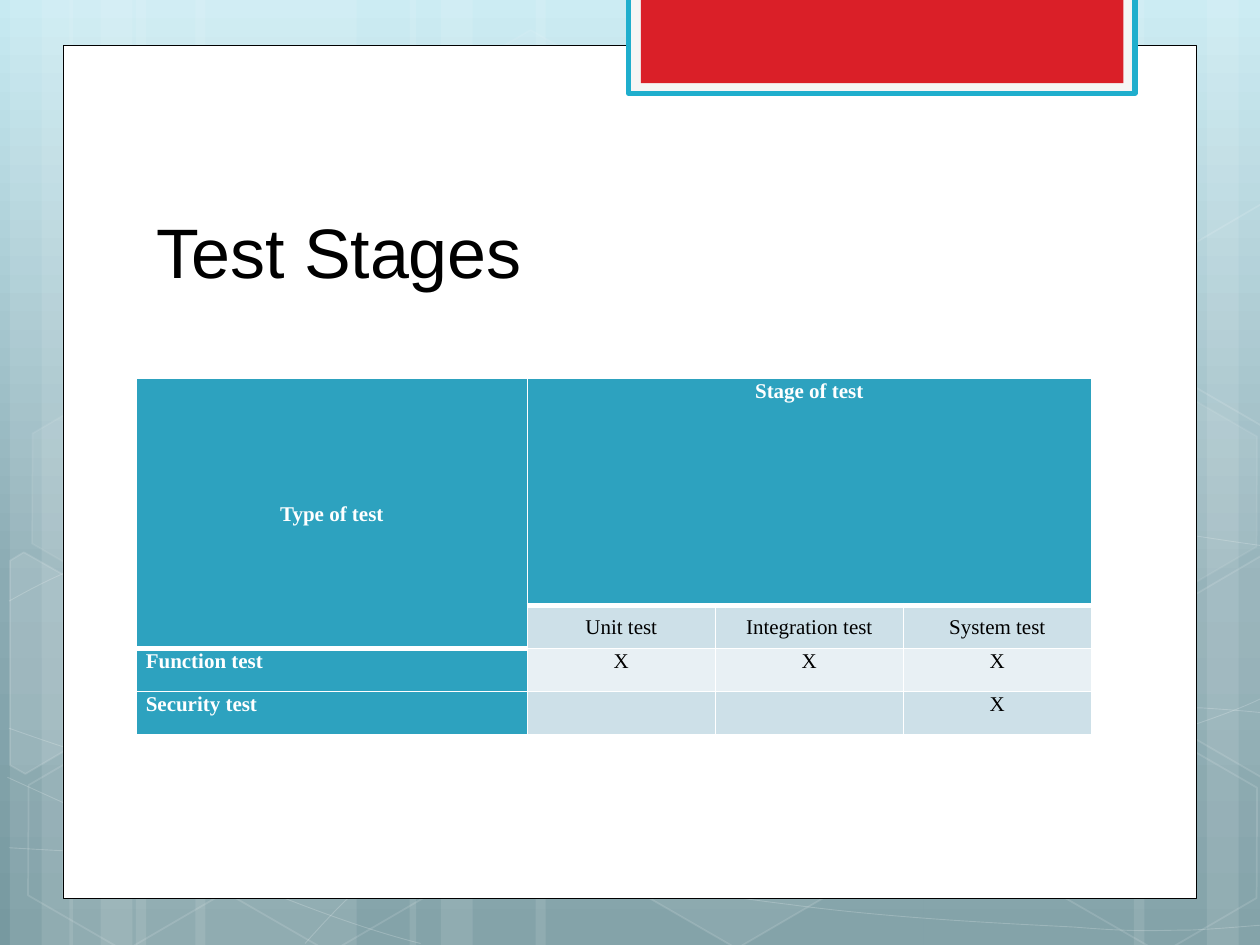
from copy import deepcopy
from math import cos, radians, sin

from pptx import Presentation
from pptx import util as u
from pptx.dml.color import RGBColor
from pptx.enum import shapes, text
from pptx.oxml import parse_xml
from pptx.oxml.ns import nsdecls, qn

WHITE = RGBColor(0xFF, 0xFF, 0xFF)
BLACK = RGBColor(0, 0, 0)
PALE = RGBColor(0xF5, 0xF5, 0xF5)
CYAN = RGBColor(0x1F, 0xAE, 0xCD)
RED = RGBColor(0xDA, 0x1F, 0x28)
TEAL = RGBColor(0x2D, 0xA2, 0xBF)
BAND_DARK = RGBColor(0xCD, 0xE0, 0xE8)
BAND_LIGHT = RGBColor(0xE8, 0xF0, 0xF4)
SKY = [(0, "C7EAF2"), (62, "8BABB3"), (100, "7799A0")]

WIDTH, HEIGHT = 25.4, 19.05
TILT = 30
STRIPES = [(2.74, 4.45), (0.2, 1.27), (0.84, 2.11), (3.94, 4.45), (1.4, 1.27), (2.03, 2.11),
           (18.62, 4.45), (24.33, 1.27), (22.86, 2.11), (10.8, 7.82), (8.26, 1.27), (8.89, 2.11)]
CURVES = [
    [(0.18, 17.09), (1.55, 17.17), (2.92, 17.25), (4.83, 17.22), (6.73, 17.2), (9.09, 17.15),
     (11.63, 16.89), (14.17, 16.64), (17.78, 16.15), (20.12, 15.67), (22.43, 15.19),
     (24.82, 14.43), (25.58, 14)],
    [(0.18, 12.12), (0.91, 11.71), (1.65, 11.33), (3.07, 10.95), (4.52, 10.57), (6.58, 10.01),
     (8.81, 9.83), (11.07, 9.65), (13.82, 9.63), (16.61, 9.83), (19.41, 10.03),
     (24.05, 10.82), (25.58, 11.02)],
    [(0.15, 15.67), (3.23, 17.07), (6.27, 18.47), (8.48, 19.02)],
    [(0.18, 14.68), (0.97, 14.96), (1.78, 15.24), (3.25, 15.65), (4.72, 16.03), (6.93, 16.66),
     (9.07, 17.09), (11.18, 17.53), (13.84, 17.98), (15.95, 18.24), (18.06, 18.52),
     (20.32, 18.62), (21.67, 18.69), (22.99, 18.8), (23.34, 18.75), (24, 18.75),
     (24.66, 18.72), (25.12, 18.67), (25.58, 18.64)],
    [(6.15, 19.02), (6.6, 18.52), (7.06, 18.01), (7.67, 17.55), (8.28, 17.09), (9.14, 16.59),
     (9.86, 16.23), (10.57, 15.88), (11, 15.72), (11.94, 15.47), (12.85, 15.21),
     (14.55, 14.86), (15.44, 14.68), (16.36, 14.5), (16.48, 14.5), (17.27, 14.45),
     (18.06, 14.38), (19.3, 14.3), (20.17, 14.27), (21.06, 14.25), (22.5, 14.27),
     (22.5, 14.27), (23.07, 14.27), (23.64, 14.27), (24.21, 14.27), (24.66, 14.3),
     (25.1, 14.33), (25.55, 14.38)],
]
HEXAGONS = [(8.48, 0.91, 4, 8), (12.62, 14.96, 6, 12), (0.28, 15.01, 0, 12), (0.36, 7.92, 7, 8),
            (4.42, 15.04, 0, 12), (21.18, 15.06, 0, 12), (21.18, 7.98, 7, 8)]
LEFT_EDGE = [(0.2, 11.3), (0.48, 11.13), (2.44, 12.24), (2.41, 14.48), (0.51, 15.6), (0.2, 15.42)]
RIGHT_EDGE = [(23.52, 12.32), (25.43, 11.2), (25.63, 11.33), (25.63, 15.57), (25.45, 15.67),
              (23.52, 14.55)]
RIGHT_EDGE_UPPER = [(x, y - 7.09) for x, y in RIGHT_EDGE]
CUT_HEXAGONS = [(LEFT_EDGE, (0.91, 13.59), 10), (RIGHT_EDGE, (25.02, 13.21), 4),
                (RIGHT_EDGE_UPPER, (25.02, 6.12), 0)]

ROWS = [["Type of test", "Stage of test", "", ""],
        ["", "Unit test", "Integration test", "System test"],
        ["Function test", "X", "X", "X"],
        ["Security test", "", "", "X"]]
COLUMN_WIDTHS = [7.88] + [3.79] * 3
ROW_HEIGHTS = [4.58] + [0.87] * 3


def apply_format(target, values):
    """Set every attribute named in the dict of format values."""
    for name, value in values.items():
        setattr(target, name, value)


def paint(shape, fill=None, line=None, weight=1, alphas=()):
    """Set fill and line; alphas are opacity percentages in the order fill, line."""
    shape.shadow.inherit = False
    for part, color in ((shape.fill, fill), (shape.line.fill, line)):
        if color is None:
            part.background()
        else:
            part.solid()
            part.fore_color.rgb = color
    if line is not None:
        shape.line.width = u.Pt(weight)
    for color, alpha in zip(shape.element.iter(qn("a:srgbClr")), alphas):
        color.append(parse_xml(f'<a:alpha {nsdecls("a")} val="{alpha * 1000}"/>'))


def paint_glass(shape, fill_alpha, line_alpha):
    """Tilt a shape and paint it translucent white with a translucent outline."""
    shape.rotation = TILT
    alphas = [alpha for alpha in (fill_alpha, line_alpha) if alpha]
    paint(shape, WHITE if fill_alpha else None, WHITE, 1, alphas)


def add_background(page):
    """Fill the page with the vertical sky gradient."""
    fill = page.background.fill
    fill.gradient()
    fill.gradient_angle = 270
    stops = next(page.element.iter(qn("a:gsLst")))
    model = deepcopy(stops[0])
    for stop in list(stops):
        stops.remove(stop)
    for position, color in SKY:
        stop = deepcopy(model)
        stop.set("pos", str(position * 1000))
        stop.remove(stop[0])
        stop.append(parse_xml(f'<a:srgbClr {nsdecls("a")} val="{color}"/>'))
        stops.append(stop)


def add_box(page, left, top, width, height, kind=shapes.MSO_SHAPE.RECTANGLE):
    """Add a preset shape measured in centimetres."""
    return page.shapes.add_shape(kind, u.Cm(left), u.Cm(top), u.Cm(width), u.Cm(height))


def add_hexagon(page, left, top, fill_alpha, line_alpha):
    """Add one tilted translucent hexagon."""
    box = add_box(page, left, top, 4.45, 3.86, shapes.MSO_SHAPE.HEXAGON)
    box.adjustments[0], box.adjustments[1] = 0.285, 1.155
    paint_glass(box, fill_alpha, line_alpha)


def add_outline(page, points, close):
    """Add a freeform through points in centimetres."""
    corners = [(u.Cm(x), u.Cm(y)) for x, y in points]
    builder = page.shapes.build_freeform(*corners[0])
    builder.add_line_segments(corners[1:], close=close)
    return builder.convert_to_shape()


def add_curve(page, knots):
    """Add a faint chain of cubic Bezier segments."""
    curve = add_outline(page, knots, False)
    lines = list(curve.element.iter(qn("a:lnTo")))
    for start in range(0, len(lines), 3):
        bend = parse_xml(f'<a:cubicBezTo {nsdecls("a")}/>')
        lines[start].addprevious(bend)
        for line in lines[start:start + 3]:
            bend.append(line[0])
            line.getparent().remove(line)
    paint(curve, None, WHITE, 0.5, [20])


def add_cut_hexagon(page, points, center, fill_alpha):
    """Add a hexagon cut off by the page edge, turned about its center."""
    turn = radians(TILT)
    offsets = [(x - center[0], y - center[1]) for x, y in points]
    upright = [(center[0] + x * cos(turn) + y * sin(turn),
                center[1] + y * cos(turn) - x * sin(turn)) for x, y in offsets]
    paint_glass(add_outline(page, upright, True), fill_alpha, 12)


def add_title(page, wording):
    """Place the title placeholder in front of the panel."""
    title = page.shapes.title
    apply_format(title, {"left": u.Cm(2.9), "top": u.Cm(2.84),
                         "width": u.Cm(19.51), "height": u.Cm(3.18)})
    frame = title.text_frame
    frame.text = wording
    apply_format(frame, {"vertical_anchor": text.MSO_ANCHOR.BOTTOM, "word_wrap": True,
                         "auto_size": text.MSO_AUTO_SIZE.NONE})
    para = frame.paragraphs[0]
    para.alignment = text.PP_ALIGN.LEFT
    apply_format(para.runs[0].font, {"name": "Arial", "size": u.Pt(40)})
    para.runs[0].font.color.rgb = BLACK
    title.element.getparent().append(title.element)


def add_borders(cell, row, column):
    """Draw white cell borders, heavier under the header cells."""
    header_end = 1 if column == 0 else 0
    weights = {"L": 1, "R": 1, "T": 3 if row == header_end + 1 else 1,
               "B": 3 if row <= header_end else 1}
    for side, weight in weights.items():
        cell._tc.get_or_add_tcPr().append(parse_xml(
            f'<a:ln{side} {nsdecls("a")} w="{u.Pt(weight)}"><a:solidFill>'
            f'<a:srgbClr val="{WHITE}"/></a:solidFill></a:ln{side}>'))


def fill_cell(cell, row, column, wording):
    """Format one cell of the table and write its wording."""
    header = row == 0 or column == 0
    middle = row == 1 or (row, column) == (0, 0)
    add_borders(cell, row, column)
    cell.fill.solid()
    cell.fill.fore_color.rgb = TEAL if header else BAND_DARK if row % 2 else BAND_LIGHT
    apply_format(cell, {"margin_left": u.Cm(0.19), "margin_right": u.Cm(0.19),
                        "margin_top": 0, "margin_bottom": 0, "vertical_anchor":
                        text.MSO_ANCHOR.MIDDLE if middle else text.MSO_ANCHOR.TOP})
    if wording:
        para = cell.text_frame.paragraphs[0]
        left = column == 0 and row > 0
        apply_format(para, {"line_spacing": 1.07, "alignment":
                            text.PP_ALIGN.LEFT if left else text.PP_ALIGN.CENTER})
        span = para.add_run()
        span.text = wording
        apply_format(span.font, {"name": "Times New Roman", "size": u.Pt(12), "bold": header})
        span.font.color.rgb = WHITE if header else BLACK


def add_stage_table(page):
    """Add the table of test types against test stages."""
    table = page.shapes.add_table(
        len(ROWS), len(COLUMN_WIDTHS), u.Cm(2.75), u.Cm(7.62),
        u.Cm(sum(COLUMN_WIDTHS)), u.Cm(sum(ROW_HEIGHTS))).table
    apply_format(table, {"first_row": False, "horz_banding": False})
    for column, width in zip(table.columns, COLUMN_WIDTHS):
        column.width = u.Cm(width)
    for row, height in zip(table.rows, ROW_HEIGHTS):
        row.height = u.Cm(height)
    for row, wordings in enumerate(ROWS):
        for column, wording in enumerate(wordings):
            # BAND
            fill_cell(table.cell(row, column), row, column, wording)
    table.cell(0, 0).merge(table.cell(1, 0))
    table.cell(0, 1).merge(table.cell(0, 3))


def main():
    """Build the slide and save the deck."""
    deck = Presentation()
    apply_format(deck, {"slide_width": u.Cm(WIDTH), "slide_height": u.Cm(HEIGHT)})
    page = deck.slides.add_slide(deck.slide_layouts[5])
    add_background(page)
    for left, width in STRIPES:
        paint(add_box(page, left, 0, width, HEIGHT), WHITE, alphas=[10])
    for knots in CURVES:
        add_curve(page, knots)
    for hexagon in HEXAGONS:
        add_hexagon(page, *hexagon)
    for cut_hexagon in CUT_HEXAGONS:
        add_cut_hexagon(page, *cut_hexagon)
    paint(add_box(page, 1.27, 0.91, 22.86, 17.2), WHITE, BLACK, 0.5)
    paint(add_box(page, 12.67, -0.05, 10.21, 1.93), PALE, CYAN, 3)
    paint(add_box(page, 12.92, -0.05, 9.73, 1.73), RED)
    add_title(page, "Test Stages")
    add_stage_table(page)
    deck.save("out.pptx")


if __name__ == "__main__":
    main()
